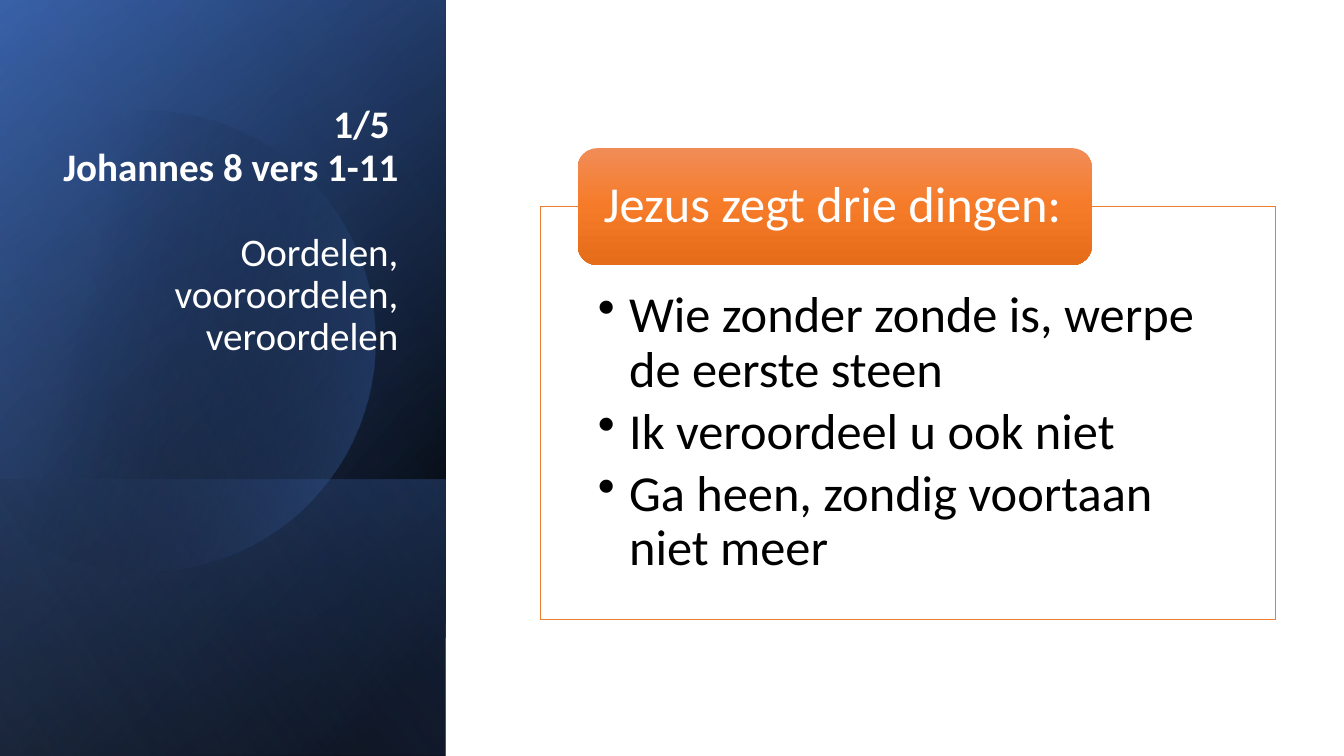
from dataclasses import dataclass

from lxml import etree
from pptx import Presentation
from pptx.dml.color import RGBColor
from pptx.enum.shapes import MSO_SHAPE as Preset
from pptx.enum.text import MSO_ANCHOR as Anchor, PP_ALIGN as Align
from pptx.oxml.ns import qn
from pptx.shapes.autoshape import Shape
from pptx.slide import Slide
from pptx.text.text import TextFrame, _Paragraph as Paragraph
from pptx.util import Inches, Pt

Point = tuple[float, float]
Box = tuple[float, float, float, float]


@dataclass(frozen=True)
class Theme:
    font: str = "Calibri"
    white: str = "FFFFFF"
    black: str = "000000"
    navy: str = "2F5597"
    blue: str = "4472C4"
    pale_blue: str = "8FAADC"
    orange: str = "ED7D31"
    tab_top: str = "F18C57"
    tab_middle: str = "F67B28"
    tab_bottom: str = "E56C19"
    title_size: float = 27.9
    body_size: float = 36
    line_spacing: float = 0.9


@dataclass(frozen=True)
class Stop:
    position: int
    color: str
    opacity: int = 100


@dataclass(frozen=True)
class Layer:
    """A gradient laid over the side panel; box is the area it covers."""
    box: Box
    angle: int
    stops: tuple[Stop, ...]


THEME = Theme()
PANEL: Box = (0, 0, 4.42, 7.5)
PANEL_FOOT: Box = (0, 4.76, 4.42, 2.74)
BASE_LAYERS = (
    Layer(PANEL, 50, (Stop(8, THEME.black), Stop(100, THEME.navy))),
    Layer(PANEL, 30, (Stop(0, THEME.black, 0), Stop(99, THEME.blue, 46))),
    Layer(PANEL_FOOT, 130, (Stop(2, THEME.blue, 29), Stop(100, THEME.black, 30))),
)
TOP_LAYER = Layer(PANEL, 120, (Stop(0, THEME.black, 0), Stop(99, THEME.pale_blue, 11)))
DISC_STOPS = (Stop(29, THEME.black, 0), Stop(100, THEME.blue, 43))
DISC_START: Point = (1.49, 1.1)
DISC_RIGHT_CURVES = (
    ((2.46, 1.12), (3.35, 1.77), (3.63, 2.75)),
    ((3.98, 3.97), (3.28, 5.23), (2.07, 5.58)),
    ((1.31, 5.8), (0.53, 5.61), (-0.03, 5.14)),
)
DISC_LEFT_EDGE = ((-0.15, 5.03), (-0.15, 1.75), (0, 1.61))
DISC_TOP_CURVES = (
    ((0.23, 1.42), (0.5, 1.28), (0.8, 1.19)),
    ((1.03, 1.13), (1.26, 1.1), DISC_START),
)
TAB_STOPS = (Stop(0, THEME.tab_top), Stop(50, THEME.tab_middle), Stop(100, THEME.tab_bottom))
SAYINGS = (
    "Wie zonder zonde is, werpe de eerste steen",
    "Ik veroordeel u ook niet",
    "Ga heen, zondig voortaan niet meer",
)


def fill_gradient(shape: Shape, stops: tuple[Stop, ...], angle: int) -> None:
    """Fill without outline or shadow; angle runs clockwise in degrees."""
    gradient = etree.Element(qn("a:gradFill"), rotWithShape="1")
    stop_list = etree.SubElement(gradient, qn("a:gsLst"))
    for stop in stops:
        entry = etree.SubElement(stop_list, qn("a:gs"), pos=str(stop.position * 1000))
        color = etree.SubElement(entry, qn("a:srgbClr"), val=stop.color)
        if stop.opacity < 100:
            etree.SubElement(color, qn("a:alpha"), val=str(stop.opacity * 1000))
    etree.SubElement(gradient, qn("a:lin"), ang=str(angle * 60000), scaled="0")
    shape._element.spPr.insert(2, gradient)
    shape.line.fill.background()
    shape.shadow.inherit = False


def add_preset(slide: Slide, preset: Preset, box: Box) -> Shape:
    return slide.shapes.add_shape(preset, *map(Inches, box))


def add_layer(slide: Slide, layer: Layer) -> None:
    """Draw the layer as a mirrored rectangle on its side, which turns its gradient."""
    left, top, width, height = layer.box
    shift = (width - height) / 2
    sheet = add_preset(slide, Preset.RECTANGLE, (left + shift, top - shift, height, width))
    sheet.rotation = 90
    sheet._element.spPr.find(qn("a:xfrm")).set("flipH", "1")
    fill_gradient(sheet, layer.stops, layer.angle)


def curve_points(start: Point, curves: tuple, steps: int = 24) -> list[Point]:
    """Sample a chain of cubic Bézier curves."""
    points = []
    for first, second, end in curves:
        for step in range(1, steps + 1):
            t = step / steps
            weights = ((1 - t) ** 3, 3 * t * (1 - t) ** 2, 3 * t * t * (1 - t), t ** 3)
            corners = (start, first, second, end)
            points.append(tuple(sum(w * c[axis] for w, c in zip(weights, corners))
                                for axis in (0, 1)))
        start = end
    return points


def add_disc(slide: Slide) -> None:
    outline = [*curve_points(DISC_START, DISC_RIGHT_CURVES), *DISC_LEFT_EDGE,
               *curve_points(DISC_LEFT_EDGE[-1], DISC_TOP_CURVES)]
    builder = slide.shapes.build_freeform(*map(Inches, DISC_START))
    builder.add_line_segments([(Inches(x), Inches(y)) for x, y in outline], close=True)
    fill_gradient(builder.convert_to_shape(), DISC_STOPS, 14)


def set_frame(frame: TextFrame, anchor: Anchor, insets: Box) -> None:
    """Insets run left, top, right, bottom."""
    frame.word_wrap = True
    frame.vertical_anchor = anchor
    (frame.margin_left, frame.margin_top,
     frame.margin_right, frame.margin_bottom) = map(Inches, insets)


def format_paragraph(paragraph: Paragraph, size: float, color: str,
                     align: Align = Align.LEFT, bold: bool = False) -> None:
    paragraph.alignment = align
    paragraph.line_spacing = THEME.line_spacing
    for run in paragraph.runs:
        run.font.name = THEME.font
        run.font.size = Pt(size)
        run.font.bold = bold
        run.font.color.rgb = RGBColor.from_string(color)


def add_bullet(paragraph: Paragraph) -> None:
    properties = paragraph._p.get_or_add_pPr()
    properties.set("marL", str(Inches(0.31)))
    properties.set("indent", str(Inches(-0.31)))
    etree.SubElement(properties, qn("a:buChar"), char="•")


def add_title(slide: Slide) -> None:
    box = map(Inches, (0.36, 0.97, 3.69, 3.49))
    frame = slide.shapes.add_textbox(*box).text_frame
    set_frame(frame, Anchor.BOTTOM, (0.1, 0.05, 0.1, 0.9))
    frame.text = "1/5 \vJohannes 8 vers 1-11\nOordelen, vooroordelen, veroordelen"
    passage, theme_words = frame.paragraphs
    format_paragraph(passage, THEME.title_size, THEME.white, Align.RIGHT, bold=True)
    format_paragraph(theme_words, THEME.title_size, THEME.white, Align.RIGHT)
    theme_words.space_before = Pt(30.6)


def add_sayings(slide: Slide) -> None:
    card = add_preset(slide, Preset.RECTANGLE, (5.36, 2.05, 7.29, 4.09))
    card.shadow.inherit = False
    card.fill.solid()
    card.fill.fore_color.rgb = RGBColor.from_string(THEME.white)
    card.line.color.rgb = RGBColor.from_string(THEME.orange)
    card.line.width = Pt(0.5)
    set_frame(card.text_frame, Anchor.TOP, (0.57, 0.82, 0.57, 0.28))
    card.text_frame.text = "\n".join(SAYINGS)
    for saying in card.text_frame.paragraphs:
        format_paragraph(saying, THEME.body_size, THEME.black)
        saying.space_after = Pt(5.4)
        add_bullet(saying)


def add_tab(slide: Slide) -> None:
    tab = add_preset(slide, Preset.ROUNDED_RECTANGLE, (5.73, 1.47, 5.1, 1.16))
    fill_gradient(tab, TAB_STOPS, 90)
    set_frame(tab.text_frame, Anchor.MIDDLE, (0.2, 0, 0.1, 0))
    tab.text_frame.text = "Jezus zegt drie dingen:"
    format_paragraph(tab.text_frame.paragraphs[0], THEME.body_size, THEME.white)


def main() -> None:
    deck = Presentation()
    deck.slide_width, deck.slide_height = Inches(13.33), Inches(7.5)
    slide = deck.slides.add_slide(deck.slide_layouts[6])
    for layer in BASE_LAYERS:
        add_layer(slide, layer)
    add_disc(slide)
    add_layer(slide, TOP_LAYER)
    add_title(slide)
    add_sayings(slide)
    add_tab(slide)
    deck.save("out.pptx")


if __name__ == "__main__":
    main()
